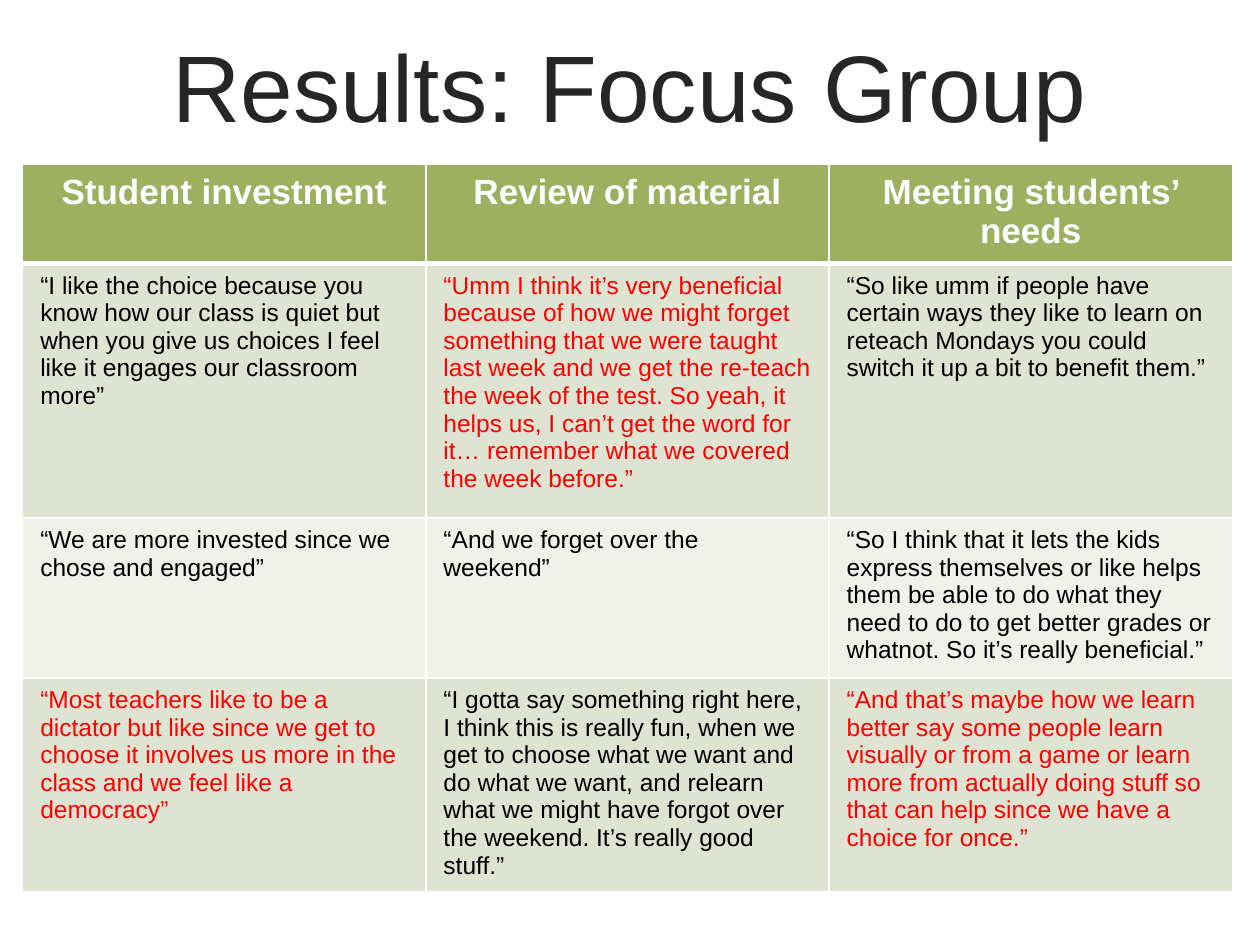
from lxml import etree
from pptx import Presentation
from pptx.dml.color import RGBColor
from pptx.enum.text import MSO_ANCHOR, MSO_AUTO_SIZE, PP_ALIGN
from pptx.oxml.ns import qn
from pptx.util import Inches, Pt

CENTER, LEFT = PP_ALIGN.CENTER, PP_ALIGN.LEFT
MIDDLE, TOP = MSO_ANCHOR.MIDDLE, MSO_ANCHOR.TOP
NO_AUTOFIT = MSO_AUTO_SIZE.NONE
TITLE_ONLY = 5

WHITE, BLACK, RED, CHARCOAL = "FFFFFF", "000000", "FF0000", "262626"
GREEN, PALE_GREEN, PALEST_GREEN = "9EB060", "DFE4D2", "F0F2EA"

THEMES = ["Student investment", "Review of material", "Meeting students’ needs"]
QUOTES = [
    [
        "“I like the choice because you know how our class is quiet but when you "
        "give us choices I feel like it engages our classroom more”",
        "“Umm I think it’s very beneficial because of how we might forget something "
        "that we were taught last week and we get the re-teach the week of the test. "
        "So yeah, it helps us, I can’t get the word for it… remember what we covered "
        "the week before.”",
        "“So like umm if people have certain ways they like to learn on reteach "
        "Mondays you could switch it up a bit to benefit them.”",
    ],
    [
        "“We are more invested since we chose and engaged”",
        "“And we forget over the weekend”",
        "“So I think that it lets the kids express themselves or like helps them be "
        "able to do what they need to do to get better grades or whatnot. So it’s "
        "really beneficial.”",
    ],
    [
        "“Most teachers like to be a dictator but like since we get to choose it "
        "involves us more in the class and we feel like a democracy”",
        "“I gotta say something right here, I think this is really fun, when we get "
        "to choose what we want and do what we want, and relearn what we might have "
        "forgot over the weekend. It’s really good stuff.”",
        "“And that’s maybe how we learn better say some people learn visually or "
        "from a game or learn more from actually doing stuff so that can help since "
        "we have a choice for once.”",
    ],
]
HIGHLIGHTED = {(1, 1), (3, 0), (3, 2)}  # (table row, column)
COLUMN_WIDTH = 3.2
ROW_HEIGHTS = [0.79, 2.02, 1.27, 1.7]


def rgb(value):
    return RGBColor.from_string(value)


class SlideBuilder:
    font_name = "Arial"

    def __init__(self, slide):
        self.slide = slide

    def style(self, paragraph, size, color, bold=False, align=LEFT):
        paragraph.alignment = align
        font = paragraph.font
        font.name, font.size, font.bold = self.font_name, Pt(size), bold
        font.color.rgb = rgb(color)

    def title(self, text, left, top, width, height):
        title = self.slide.shapes.title
        title.left, title.top = Inches(left), Inches(top)
        title.width, title.height = Inches(width), Inches(height)
        frame = title.text_frame
        frame.text = text
        frame.word_wrap = True
        frame.auto_size = NO_AUTOFIT
        frame.vertical_anchor = MIDDLE
        self.style(frame.paragraphs[0], 54, CHARCOAL, align=CENTER)

    def borders(self, cell, top, bottom):
        """Draw white cell borders; top and bottom are widths in points."""
        properties = cell._tc.get_or_add_tcPr()
        sides = [("a:lnL", 1), ("a:lnR", 1), ("a:lnT", top), ("a:lnB", bottom)]
        for position, (tag, width) in enumerate(sides):
            line = etree.Element(qn(tag), w=str(Pt(width)))
            fill = etree.SubElement(line, qn("a:solidFill"))
            etree.SubElement(fill, qn("a:srgbClr"), val=WHITE)
            properties.insert(position, line)

    def cell(self, cell, text, fill, **text_style):
        cell.text = text
        cell.margin_left = cell.margin_right = Inches(0.14)
        cell.margin_top = cell.margin_bottom = Inches(0.07)
        cell.vertical_anchor = TOP
        cell.fill.solid()
        cell.fill.fore_color.rgb = rgb(fill)
        self.style(cell.text_frame.paragraphs[0], **text_style)

    def quote_table(self, left, top):
        rows = [THEMES] + QUOTES
        table = self.slide.shapes.add_table(
            len(rows), len(THEMES), Inches(left), Inches(top),
            Inches(COLUMN_WIDTH * len(THEMES)), Inches(sum(ROW_HEIGHTS)),
        ).table
        for column in table.columns:
            column.width = Inches(COLUMN_WIDTH)
        for r, (texts, height) in enumerate(zip(rows, ROW_HEIGHTS)):
            table.rows[r].height = Inches(height)
            for c, text in enumerate(texts):
                cell = table.cell(r, c)
                if r == 0:
                    self.cell(cell, text, GREEN, size=20, color=WHITE,
                              bold=True, align=CENTER)
                else:
                    self.cell(cell, text, PALE_GREEN if r % 2 else PALEST_GREEN,
                              size=14, color=RED if (r, c) in HIGHLIGHTED else BLACK)
                self.borders(cell, top=3 if r == 1 else 1, bottom=3 if r == 0 else 1)


def main():
    presentation = Presentation()
    presentation.slide_width, presentation.slide_height = Inches(10), Inches(7.5)
    layout = presentation.slide_layouts[TITLE_ONLY]
    builder = SlideBuilder(presentation.slides.add_slide(layout))
    builder.title("Results: Focus Group", 0.79, 0.05, 8.41, 1.25)
    builder.quote_table(0.18, 1.3)
    presentation.save("out.pptx")


if __name__ == "__main__":
    main()
